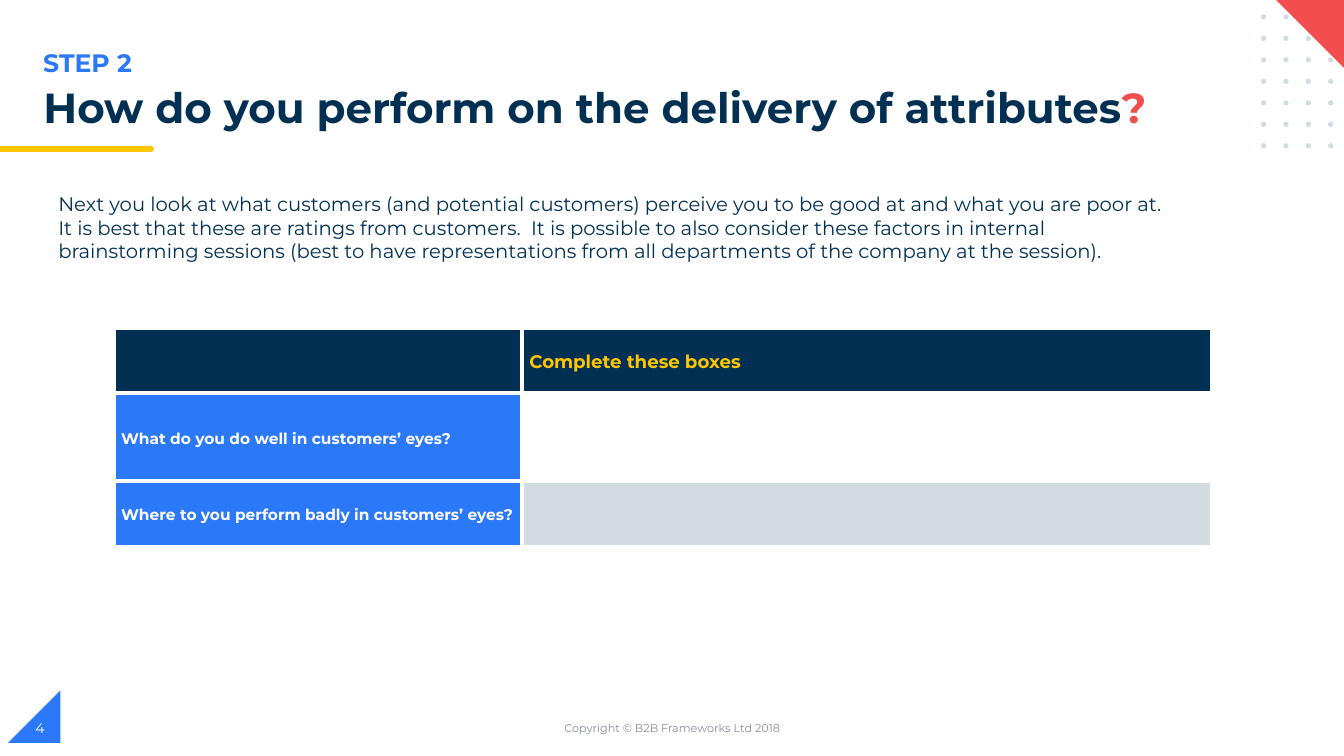
from collections import namedtuple

from lxml import etree
from pptx import Presentation
from pptx.dml.color import RGBColor
from pptx.enum.shapes import MSO_SHAPE
from pptx.enum.text import MSO_ANCHOR, MSO_AUTO_SIZE, PP_ALIGN
from pptx.oxml.ns import qn
from pptx.util import Cm, Pt

RECTANGLE = MSO_SHAPE.RECTANGLE
ROUNDED_END = MSO_SHAPE.FLOWCHART_TERMINATOR
DOT = MSO_SHAPE.OVAL
CORNER = MSO_SHAPE.RIGHT_TRIANGLE
TOP, MIDDLE = MSO_ANCHOR.TOP, MSO_ANCHOR.MIDDLE
LEFT, CENTER = PP_ALIGN.LEFT, PP_ALIGN.CENTER
NO_AUTOFIT = MSO_AUTO_SIZE.NONE

FONT = "Montserrat"
COLORS = {
    "navy": "023053",
    "blue": "2B79F8",
    "yellow": "FFC600",
    "red": "F24E4E",
    "mist": "D1DBE0",
    "gray": "888C97",
    "white": "FFFFFF",
}
BODY = (
    "Next you look at what customers (and potential customers) perceive you to be "
    "good at and what you are poor at.  It is best that these are ratings from "
    "customers.  It is possible to also consider these factors in internal "
    "brainstorming sessions (best to have representations from all departments of "
    "the company at the session)."
)

Box = namedtuple("Box", "left top width height")


def color(name):
    """Return a palette colour."""
    return RGBColor.from_string(COLORS[name])


def lengths(box):
    """Convert a box in centimetres to slide lengths."""
    return [Cm(value) for value in box]


def add_span(para, text, size, shade, bold=False):
    """Append one formatted run to a paragraph."""
    span = para.add_run()
    span.text = text
    span.font.name = FONT
    span.font.size = Pt(size)
    span.font.bold = bold
    span.font.color.rgb = color(shade)


def add_text(page, box, text, size, shade, bold=False, anchor=TOP, align=LEFT):
    """Place a wrapped text box with one paragraph."""
    frame = page.shapes.add_textbox(*lengths(box)).text_frame
    frame.word_wrap = True
    frame.vertical_anchor = anchor
    para = frame.paragraphs[0]
    para.alignment = align
    add_span(para, text, size, shade, bold)


def add_plain(page, kind, box, shade, rotation=0):
    """Place a flat shape without outline or shadow."""
    shape = page.shapes.add_shape(kind, *lengths(box))
    shape.shadow.inherit = False
    shape.fill.solid()
    shape.fill.fore_color.rgb = color(shade)
    shape.line.fill.background()
    shape.rotation = rotation


def add_heading(page, box):
    """Place the step label, the title and the yellow underline."""
    add_text(page, Box(box.left, box.top, 17, 1.02), "STEP 2", 18, "blue", True)
    title = page.shapes.title
    title.left, title.top, title.width, title.height = lengths(
        Box(box.left, box.top + 1.01, box.width, 1.42))
    frame = title.text_frame
    frame.auto_size = NO_AUTOFIT
    frame.word_wrap = True
    frame.vertical_anchor = TOP
    para = frame.paragraphs[0]
    para.alignment = LEFT
    para.line_spacing = 0.9
    add_span(para, "How do you perform on the delivery of attributes", 30, "navy", True)
    add_span(para, "?", 30, "red", True)
    rule_top = box.top + box.height - 0.15
    add_plain(page, ROUNDED_END, Box(3.4, rule_top, 0.48, 0.15), "yellow")
    add_plain(page, RECTANGLE, Box(0, rule_top, 3.58, 0.15), "yellow")


def add_corner(page, box):
    """Place the dot grid and the red triangle over it."""
    rows, columns, size = 7, 4, 0.13
    row_step = (box.height - size) / (rows - 1)
    column_step = (box.width - size) / (columns - 1)
    for row in range(rows):
        for column in range(columns):
            left = box.left + column * column_step
            top = box.top + row * row_step
            add_plain(page, DOT, Box(left, top, size, size), "mist")
    add_plain(page, CORNER, Box(box.left + 0.35, box.top - 0.39, 1.83, 1.83), "red", 180)


def add_borders(cell):
    """Give a table cell white borders on all sides."""
    properties = cell._tc.get_or_add_tcPr()
    for side in ("a:lnL", "a:lnR", "a:lnT", "a:lnB"):
        line = etree.SubElement(properties, qn(side), w=str(Pt(3)))
        fill = etree.SubElement(line, qn("a:solidFill"))
        etree.SubElement(fill, qn("a:srgbClr"), val=COLORS["white"])


def fill_cell(cell, text, size, shade, fill):
    """Format one table cell and write its text."""
    add_borders(cell)
    cell.fill.solid()
    cell.fill.fore_color.rgb = color(fill)
    cell.vertical_anchor = MIDDLE
    cell.margin_left = cell.margin_right = Cm(0.18)
    cell.margin_top = cell.margin_bottom = 0
    if text:
        para = cell.text_frame.paragraphs[0]
        para.line_spacing = 1.15
        add_span(para, text, size, shade, True)


def add_ratings(page, box):
    """Place the table of strengths and weaknesses."""
    rows = [
        [("", 13, "yellow", "navy"), ("Complete these boxes", 13, "yellow", "navy")],
        [("What do you do well in customers’ eyes?", 11, "white", "blue"),
         ("", 11, "navy", "white")],
        [("Where to you perform badly in customers’ eyes?", 11, "white", "blue"),
         ("", 11, "navy", "mist")],
    ]
    table = page.shapes.add_table(len(rows), 2, *lengths(box)).table
    question_width = 10.29
    table.columns[0].width = Cm(question_width)
    table.columns[1].width = Cm(box.width - question_width)
    outer_height = 1.65
    heights = (outer_height, box.height - 2 * outer_height, outer_height)
    for row, (height, cells) in enumerate(zip(heights, rows)):
        table.rows[row].height = Cm(height)
        for column, content in enumerate(cells):
            fill_cell(table.cell(row, column), *content)


def add_footer(page, box):
    """Place the page number on its triangle and the copyright line."""
    add_plain(page, CORNER, Box(box.left, box.top, 1.32, 1.32), "blue", 270)
    text_top = box.top + 0.43
    add_text(page, Box(11.23, text_top, 11.43, 1.02),
             "Copyright © B2B Frameworks Ltd 2018", 8, "gray",
             anchor=MIDDLE, align=CENTER)
    add_text(page, Box(box.left + 0.44, text_top, 1.5, 1.02), "4", 10, "white",
             anchor=MIDDLE)


def main():
    """Build the slide and save the deck."""
    deck = Presentation()
    deck.slide_width, deck.slide_height = Cm(33.87), Cm(19.05)
    page = deck.slides.add_slide(deck.slide_layouts[5])
    add_corner(page, Box(31.78, 0.36, 1.82, 3.38))
    add_heading(page, Box(0.84, 1.07, 28.32, 2.76))
    add_text(page, Box(1.22, 4.72, 28.68, 2.06), BODY, 14, "navy")
    add_ratings(page, Box(2.87, 8.26, 27.66, 5.51))
    add_footer(page, Box(0.2, 17.4, 33.47, 1.45))
    deck.save("out.pptx")


if __name__ == "__main__":
    main()
